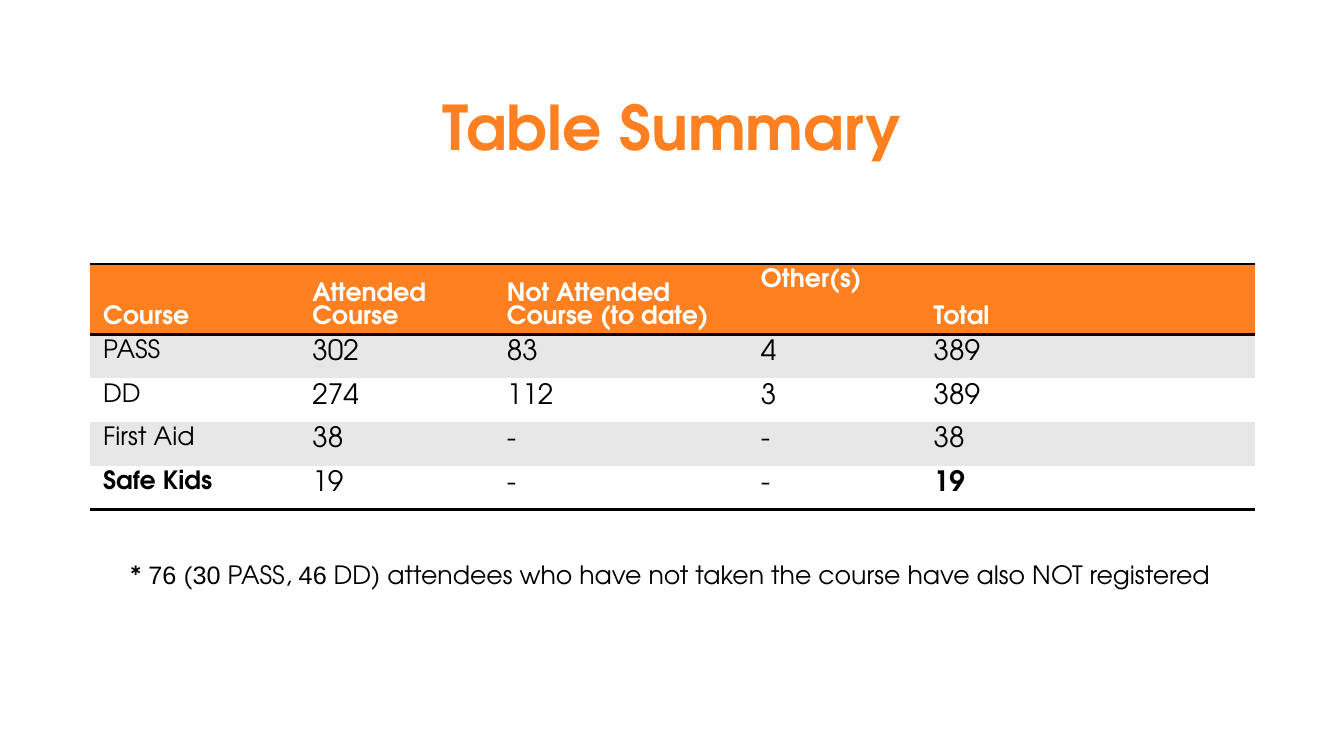
from lxml import etree
from pptx import Presentation
from pptx.dml.color import RGBColor
from pptx.enum.text import MSO_ANCHOR, PP_ALIGN
from pptx.oxml.ns import qn
from pptx.util import Pt

ORANGE = RGBColor(0xFF, 0x80, 0x21)
BLACK = RGBColor(0, 0, 0)
WHITE = RGBColor(0xFF, 0xFF, 0xFF)
GREY = RGBColor(0xE7, 0xE7, 0xE7)
TOP, MIDDLE, BOTTOM = MSO_ANCHOR.TOP, MSO_ANCHOR.MIDDLE, MSO_ANCHOR.BOTTOM
CENTER = PP_ALIGN.CENTER

MAIN_FONT = "TeX Gyre Adventor"
FIGURE_FONT = "Arial"
PLAIN_TABLE_STYLE = "{2D5ABB26-0587-4C30-8999-92F81FD0307C}"

COLUMN_WIDTHS = [149.4, 139, 181.5, 123.4, 238.6]
HEADER_HEIGHT, ROW_HEIGHT = 40, 29.25
HEADERS = ["Course", "Attended Course", "Not Attended Course (to date)", "Other(s)", "Total"]
COURSES = [
    ["PASS", "302", "83", "4", "389"],
    ["DD", "274", "112", "3", "389"],
    ["First Aid", "38", "-", "-", "38"],
    ["Safe Kids", "19", "-", "-", "19"],
]
BOLD_CELLS = {(4, 0), (4, 4)}
FOOTNOTE = [
    ("* ", MAIN_FONT), ("76", FIGURE_FONT), (" (", MAIN_FONT), ("30 ", FIGURE_FONT),
    ("PASS, ", MAIN_FONT), ("46", FIGURE_FONT),
    (" DD) attendees who have not taken the course have also NOT registered ", MAIN_FONT),
]


def style_font(font, size, color, bold=False):
    font.name = MAIN_FONT
    font.size = Pt(size)
    font.bold = bold
    font.color.rgb = color


def add_centered_box(slide, left, top, width, height, anchor):
    """Add a wrapping text box and return its first paragraph."""
    frame = slide.shapes.add_textbox(Pt(left), Pt(top), Pt(width), Pt(height)).text_frame
    frame.word_wrap = True
    frame.vertical_anchor = anchor
    para = frame.paragraphs[0]
    para.alignment = CENTER
    return para


def add_title(slide, left, top, width, height):
    para = add_centered_box(slide, left, top, width, height, MIDDLE)
    para.text = "Table Summary"
    para.line_spacing = 0.9
    style_font(para.font, 44, ORANGE, bold=True)


def add_borders(cell, sides):
    """Draw 2 pt black lines; borders must precede the fill in the cell's XML."""
    properties = cell._tc.get_or_add_tcPr()
    for position, side in enumerate(sides):
        line = etree.Element(qn(f"a:ln{side}"), w=str(Pt(2)))
        fill = etree.SubElement(line, qn("a:solidFill"))
        etree.SubElement(fill, qn("a:srgbClr"), val=str(BLACK))
        properties.insert(position, line)


def fill_cell(cell, text, row, column):
    header = row == 0
    cell.margin_left = cell.margin_right = Pt(9.4)
    cell.margin_top = cell.margin_bottom = Pt(3.6)
    cell.vertical_anchor = BOTTOM if header and text != "Other(s)" else TOP
    cell.fill.solid()
    cell.fill.fore_color.rgb = ORANGE if header else GREY if row % 2 else WHITE
    para = cell.text_frame.paragraphs[0]
    para.text = text
    style_font(para.font, 18 if header or column == 0 else 20,
               WHITE if header else BLACK, header or (row, column) in BOLD_CELLS)
    if header:
        add_borders(cell, "TB")
    elif row == len(COURSES):
        add_borders(cell, "B")


def add_course_table(slide, left, top):
    rows = [HEADERS] + COURSES
    height = HEADER_HEIGHT + ROW_HEIGHT * len(COURSES)
    table = slide.shapes.add_table(len(rows), len(HEADERS), Pt(left), Pt(top),
                                   Pt(sum(COLUMN_WIDTHS)), Pt(height)).table
    table.horz_banding = False
    table._tbl.tblPr.find(qn("a:tableStyleId")).text = PLAIN_TABLE_STYLE
    for column, width in zip(table.columns, COLUMN_WIDTHS):
        column.width = Pt(width)
    for row, texts in enumerate(rows):
        table.rows[row].height = Pt(ROW_HEIGHT if row else HEADER_HEIGHT)
        for column, text in enumerate(texts):
            fill_cell(table.cell(row, column), text, row, column)


def add_footnote(slide, left, top, width, height):
    para = add_centered_box(slide, left, top, width, height, TOP)
    style_font(para.font, 18, BLACK)
    for text, font_name in FOOTNOTE:
        span = para.add_run()
        span.text = text
        span.font.name = font_name


def main():
    deck = Presentation()
    deck.slide_width, deck.slide_height = Pt(960), Pt(540)
    slide = deck.slides.add_slide(deck.slide_layouts[6])
    add_title(slide, 66, 54, 828, 79)
    add_course_table(slide, 64.3, 188.6)
    add_footnote(slide, 72, 396, 818.6, 29)
    deck.save("out.pptx")


if __name__ == "__main__":
    main()
